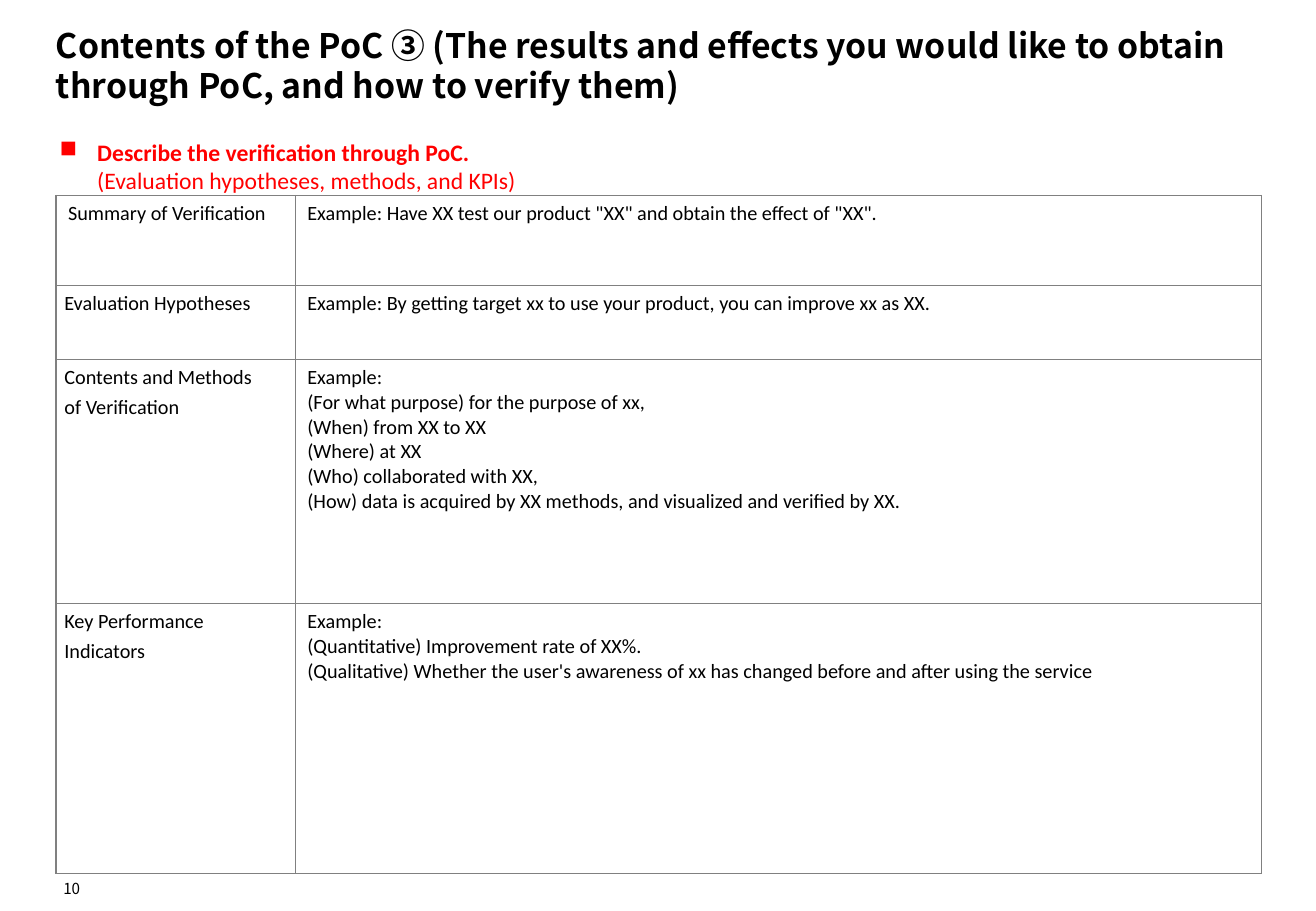
from dataclasses import dataclass

from lxml.etree import SubElement
from pptx import Presentation
from pptx.dml.color import RGBColor
from pptx.enum.text import MSO_ANCHOR as Anchor, PP_ALIGN as Align
from pptx.oxml.ns import qn
from pptx.util import Inches, Pt

HEADING_FONT = "Noto Sans CJK JP"
BODY_FONT = "Calibri"
BLACK, RED, GREY, WHITE = "000000", "FF0000", "808080", "FFFFFF"
COLUMN_WIDTHS = (1.97, 7.95)


@dataclass
class VerificationRow:
    height: float
    label: list[str]
    example: list[str]
    indent: float = 0.15
    align: Align = Align.LEFT
    tight: bool = True


ROWS = [
    VerificationRow(0.74, ["Summary of Verification"],
                    ['Example: Have XX test our product "XX" and obtain the effect of "XX".'],
                    indent=0, tight=False),
    VerificationRow(0.61, ["Evaluation Hypotheses"],
                    ["Example: By getting target xx to use your product, you can improve xx as XX."],
                    align=Align.JUSTIFY),
    VerificationRow(2.01, ["Contents and Methods", "of Verification"],
                    ["Example:",
                     "(For what purpose) for the purpose of xx,",
                     "(When) from XX to XX",
                     "(Where) at XX",
                     "(Who) collaborated with XX,",
                     "(How) data is acquired by XX methods, and visualized and verified by XX."]),
    VerificationRow(2.22, ["Key Performance Indicators"],
                    ["Example:",
                     "(Quantitative) Improvement rate of XX%.",
                     "(Qualitative) Whether the user's awareness of xx has changed before and after using the service"],
                    indent=0),
]


def color(value: str) -> RGBColor:
    return RGBColor.from_string(value)


def set_font(font, name: str, size: float, value: str, bold: bool = False) -> None:
    font.name, font.size, font.bold = name, Pt(size), bold
    font.color.rgb = color(value)


def set_frame(frame, anchor: Anchor, inset: float, wrap: bool = True) -> None:
    frame.margin_left = frame.margin_right = Inches(inset)
    frame.margin_top = frame.margin_bottom = Inches(inset)
    frame.vertical_anchor, frame.word_wrap = anchor, wrap


def set_hanging(paragraph, indent: float) -> None:
    properties = paragraph._p.get_or_add_pPr()
    properties.set("marL", str(Inches(indent)))
    properties.set("indent", str(-Inches(indent)))


def add_title(slide) -> None:
    title = slide.shapes.title
    title.left, title.top = Inches(0.46), Inches(0.2)
    title.width, title.height = Inches(9.92), Inches(0.67)
    set_frame(title.text_frame, Anchor.BOTTOM, 0)
    title.text_frame.text = ("Contents of the PoC ③ (The results and effects you would like "
                             "to obtain through PoC, and how to verify them)")
    paragraph = title.text_frame.paragraphs[0]
    paragraph.alignment, paragraph.line_spacing = Align.LEFT, Pt(24)
    set_font(paragraph.font, HEADING_FONT, 20, BLACK, bold=True)


def add_instruction(slide) -> None:
    box = slide.shapes.add_textbox(Inches(0.45), Inches(1.12), Inches(9.92), Inches(0.5))
    set_frame(box.text_frame, Anchor.MIDDLE, 0.04)
    paragraph = box.text_frame.paragraphs[0]
    set_hanging(paragraph, 0.31)
    SubElement(paragraph._p.get_or_add_pPr(), qn("a:buChar")).set("char", "■")
    set_font(paragraph.font, BODY_FONT, 14, RED)
    lead = paragraph.add_run()
    lead.text = "Describe the verification through PoC."
    set_font(lead.font, BODY_FONT, 14, RED, bold=True)
    paragraph.add_line_break()
    detail = paragraph.add_run()
    detail.text = "(Evaluation hypotheses, methods, and KPIs)"


def add_page_number(slide) -> None:
    box = slide.shapes.add_textbox(Inches(0.46), Inches(7.2), Inches(0.2), Inches(0.19))
    set_frame(box.text_frame, Anchor.BOTTOM, 0, wrap=False)
    paragraph = box.text_frame.paragraphs[0]
    paragraph.text, paragraph.alignment = "10", Align.RIGHT
    set_font(paragraph.font, HEADING_FONT, 9, BLACK)


def fill_cell(cell, lines: list[str]) -> None:
    cell.text = "\n".join(lines)
    for paragraph in cell.text_frame.paragraphs:
        set_font(paragraph.font, BODY_FONT, 12, BLACK)
    properties = cell._tc.get_or_add_tcPr()
    for side in ("lnL", "lnR", "lnT", "lnB"):
        line = SubElement(properties, qn(f"a:{side}"), w=str(Pt(1)))
        SubElement(SubElement(line, qn("a:solidFill")), qn("a:srgbClr"), val=GREY)
    cell.fill.solid()
    cell.fill.fore_color.rgb = color(WHITE)


def format_label(cell, row: VerificationRow) -> None:
    if not row.tight:
        return
    cell.margin_left = cell.margin_right = Inches(0.07)
    cell.margin_top = cell.margin_bottom = 0
    for paragraph in cell.text_frame.paragraphs:
        paragraph.alignment, paragraph.line_spacing = row.align, Pt(18)
        set_hanging(paragraph, row.indent)


def add_verification_table(slide) -> None:
    height = sum(row.height for row in ROWS)
    table = slide.shapes.add_table(len(ROWS), len(COLUMN_WIDTHS), Inches(0.46), Inches(1.61),
                                   Inches(sum(COLUMN_WIDTHS)), Inches(height)).table
    table.first_row = table.horz_banding = False
    for column, width in zip(table.columns, COLUMN_WIDTHS):
        column.width = Inches(width)
    for index, row in enumerate(ROWS):
        table.rows[index].height = Inches(row.height)
        label, example = table.cell(index, 0), table.cell(index, 1)
        fill_cell(label, row.label)
        fill_cell(example, row.example)
        format_label(label, row)


def main() -> None:
    presentation = Presentation()
    presentation.slide_width, presentation.slide_height = Inches(10.83), Inches(7.5)
    slide = presentation.slides.add_slide(presentation.slide_layouts[5])
    add_page_number(slide)
    add_title(slide)
    add_instruction(slide)
    add_verification_table(slide)
    presentation.save("out.pptx")


if __name__ == "__main__":
    main()
